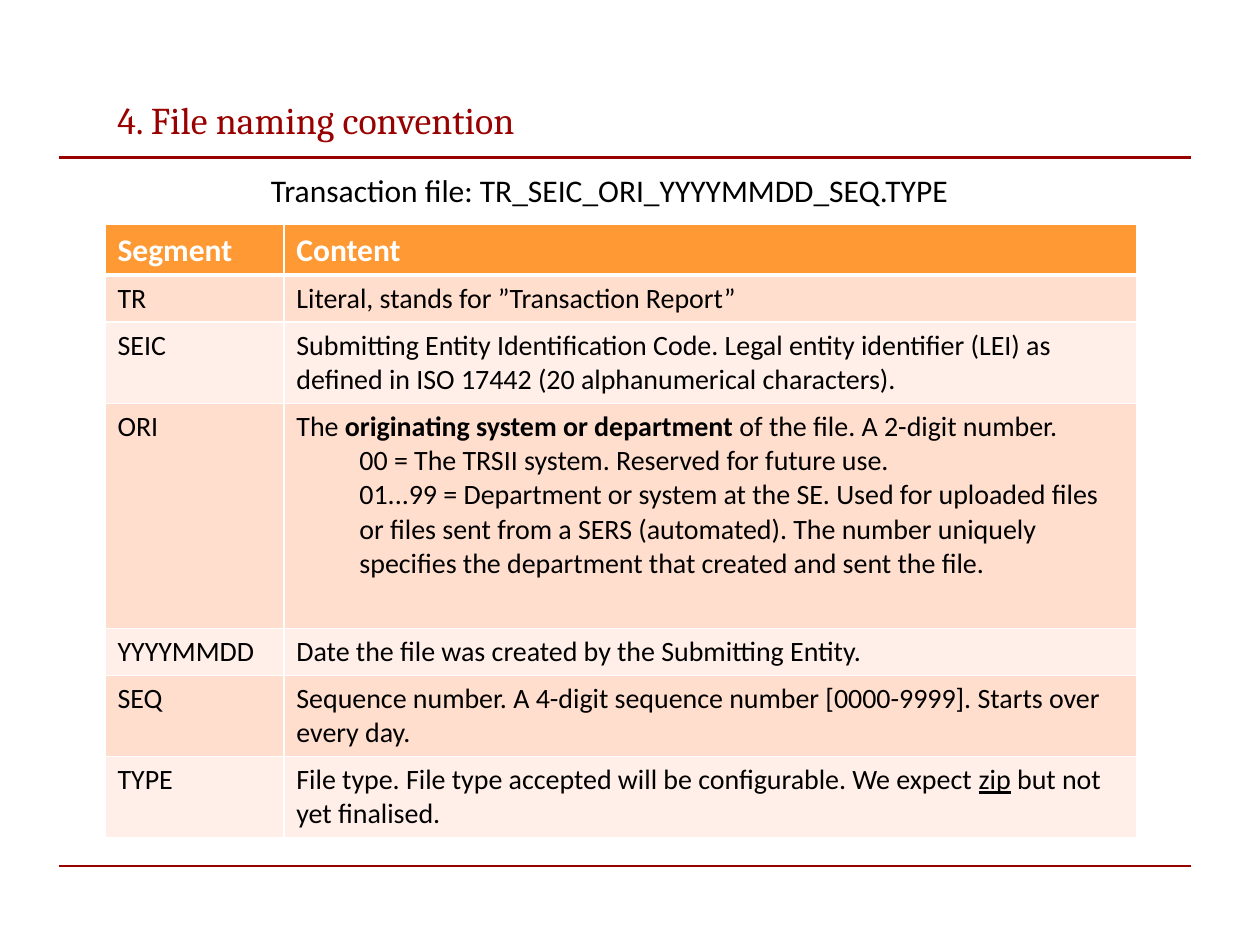
from dataclasses import dataclass

from lxml import etree
from pptx import Presentation
from pptx.dml.color import RGBColor
from pptx.enum import shapes, text
from pptx.oxml import ns
from pptx.util import Pt


@dataclass(frozen=True)
class Theme:
    accent: str = "990000"
    ink: str = "000000"
    white: str = "FFFFFF"
    header: str = "FF9933"
    bands: tuple = ("FFDECE", "FFEFE8")
    title_font: str = "Cambria"
    body_font: str = "Calibri"
    title_size: float = 21.6
    lead_size: float = 18
    body_size: float = 16


THEME = Theme()
BOLD, UNDERLINE = {"bold": True}, {"underline": True}

# A cell is a list of paragraphs: (level, [(text, format), ...])
SEGMENTS = [
    ("TR", [(0, [("Literal, stands for ”Transaction Report”", {})])]),
    ("SEIC", [(0, [("Submitting Entity Identification Code. Legal entity identifier (LEI) as "
                    "defined in ISO 17442 (20 alphanumerical characters).", {})])]),
    ("ORI", [
        (0, [("The ", {}), ("originating system or department", BOLD),
             (" of the file. A 2-digit number.", {})]),
        (1, [("00 = The TRSII system. Reserved for future use.", {})]),
        (1, [("01...99 = Department or system at the SE. Used for uploaded files or files "
              "sent from a SERS (automated). The number uniquely specifies the department "
              "that created and sent the file.", {})]),
    ]),
    ("YYYYMMDD", [(0, [("Date the file was created by the Submitting Entity.", {})])]),
    ("SEQ", [(0, [("Sequence number. A 4-digit sequence number [0000-9999]. "
                   "Starts over every day.", {})])]),
    ("TYPE", [(0, [("File type. File type accepted will be configurable. We expect ", {}),
                   ("zip", UNDERLINE), (" but not yet finalised.", {})])]),
]
COLUMN_WIDTHS = (102.2, 487.4)
ROW_HEIGHTS = (28.6, 26.9, 46.4, 128.6, 26.9, 46.4, 46.4)


def write(frame, paragraphs, color, size, font=THEME.body_font, **extra):
    for i, (level, runs) in enumerate(paragraphs):
        paragraph = frame.paragraphs[0] if i == 0 else frame.add_paragraph()
        if level:
            paragraph.level = level
            properties = paragraph._p.get_or_add_pPr()
            properties.set("marL", str(Pt(36 * level)))
            properties.set("indent", "0")
        for words, style in runs:
            run = paragraph.add_run()
            run.text = words
            formats = {"name": font, "size": Pt(size), **extra, **style}
            for key, value in formats.items():
                setattr(run.font, key, value)
            run.font.color.rgb = RGBColor.from_string(color)


def add_text(slide, box, words, color, size, font, margin_top=3.6):
    frame = slide.shapes.add_textbox(*map(Pt, box)).text_frame
    formats = {"word_wrap": True, "vertical_anchor": text.MSO_ANCHOR.TOP,
               "margin_top": Pt(margin_top)}
    for key, value in formats.items():
        setattr(frame, key, value)
    write(frame, [(0, [(words, {})])], color, size, font)


def add_rule(slide, left, top, width):
    rule = slide.shapes.add_connector(
        shapes.MSO_CONNECTOR.STRAIGHT, Pt(left), Pt(top), Pt(left + width), Pt(top))
    rule.line.width = Pt(1.25)
    rule.line.color.rgb = RGBColor.from_string(THEME.accent)
    etree.SubElement(rule._element.spPr, ns.qn("a:effectLst"))


def set_borders(cell, **widths):
    properties = cell._tc.get_or_add_tcPr()
    for side in "LRTB":
        border = etree.SubElement(properties, ns.qn(f"a:ln{side}"), w=str(Pt(widths.get(side, 1))))
        fill = etree.SubElement(border, ns.qn("a:solidFill"))
        etree.SubElement(fill, ns.qn("a:srgbClr"), val=THEME.white)


def fill_cell(cell, paragraphs, fill, color, size, borders, **extra):
    set_borders(cell, **borders)
    cell.fill.solid()
    cell.fill.fore_color.rgb = RGBColor.from_string(fill)
    write(cell.text_frame, paragraphs, color, size, **extra)


def add_segment_table(slide, left, top):
    table = slide.shapes.add_table(
        len(ROW_HEIGHTS), len(COLUMN_WIDTHS), Pt(left), Pt(top),
        Pt(sum(COLUMN_WIDTHS)), Pt(sum(ROW_HEIGHTS))).table
    for column, width in zip(table.columns, COLUMN_WIDTHS):
        column.width = Pt(width)
    for row, height in zip(table.rows, ROW_HEIGHTS):
        row.height = Pt(height)

    # Header row, set off by a thicker line
    for c, heading in enumerate(("Segment", "Content")):
        fill_cell(table.cell(0, c), [(0, [(heading, {})])], THEME.header, THEME.white,
                  THEME.lead_size, {"B": 3}, bold=True)

    # Banded body rows
    for r, (segment, content) in enumerate(SEGMENTS, start=1):
        borders = {"T": 3} if r == 1 else {}
        for c, paragraphs in enumerate(([(0, [(segment, {})])], content)):
            fill_cell(table.cell(r, c), paragraphs, THEME.bands[(r - 1) % 2], THEME.ink,
                      THEME.body_size, borders)


def build_naming_slide(slide, left, top, width, height):
    # Rules above and below the content
    for rule_top in (top, top + height):
        add_rule(slide, left, rule_top, width)
    # Title
    add_text(slide, (left + 26, top - 41, 624, 62.6), "4. File naming convention",
             THEME.accent, THEME.title_size, THEME.title_font, margin_top=6)
    # Segments of the file name
    add_segment_table(slide, left + 26, top + 38.4)
    # File name pattern
    add_text(slide, (left + 113.8, top + 4.3, 439.2, 29), "Transaction file: TR_SEIC_ORI_YYYYMMDD_SEQ.TYPE",
             THEME.ink, THEME.lead_size, THEME.body_font)


def main():
    deck = Presentation()
    deck.slide_width, deck.slide_height = Pt(720), Pt(540)
    slide = deck.slides.add_slide(deck.slide_layouts[6])
    build_naming_slide(slide, 34, 90, 646.5, 405)
    deck.save("out.pptx")


if __name__ == "__main__":
    main()
